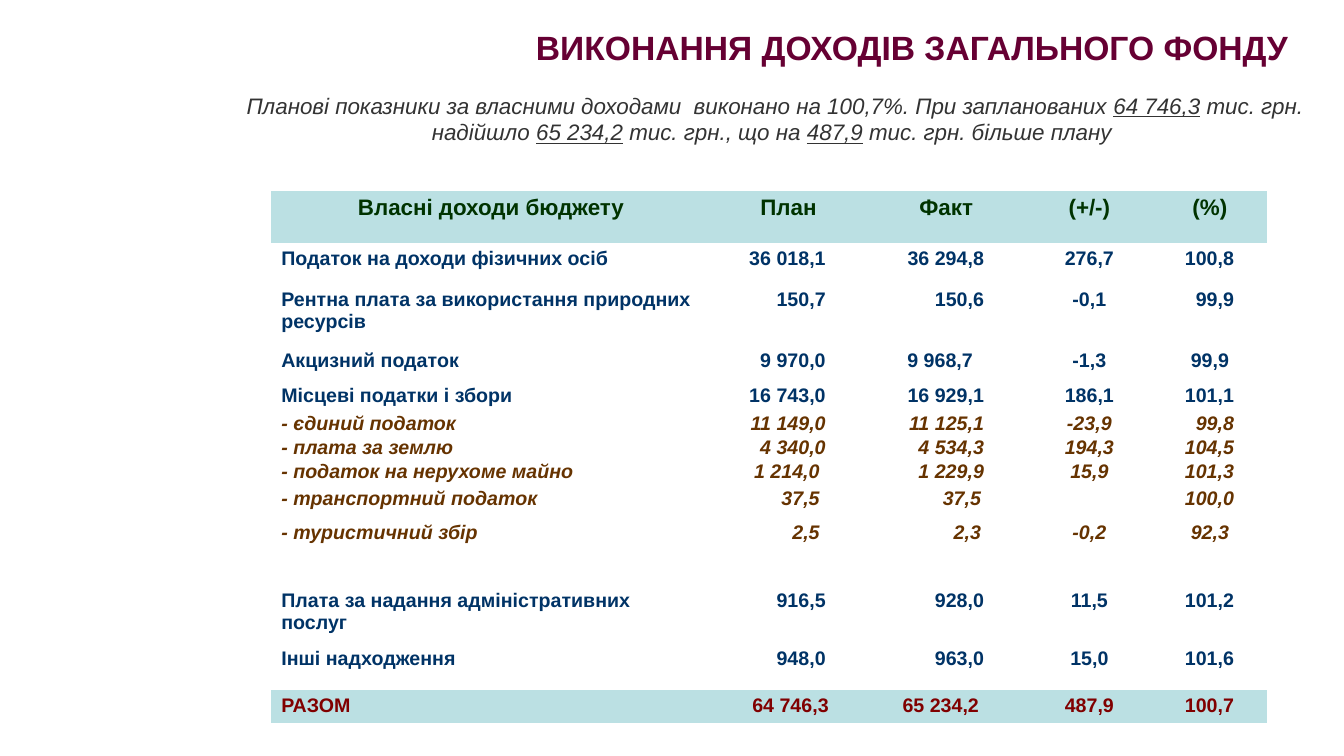
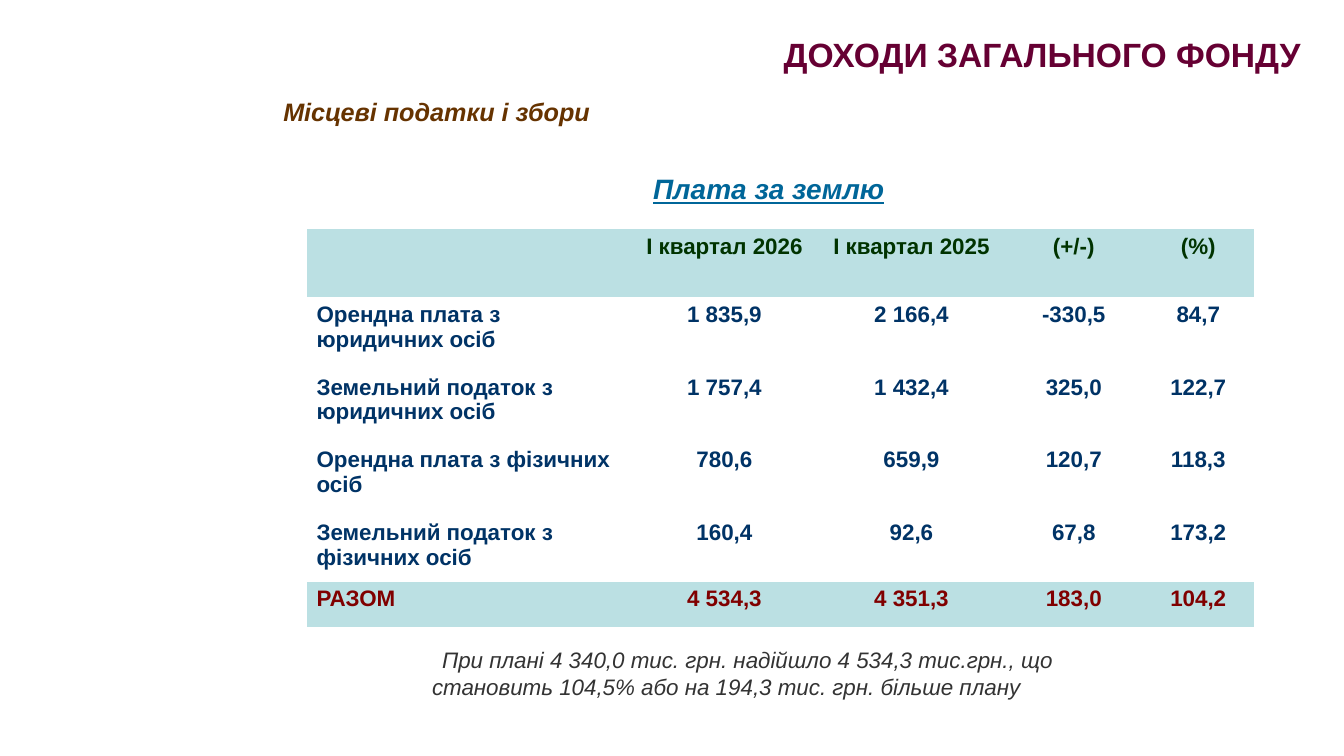
from lxml.etree import SubElement
from pptx import Presentation
from pptx.dml.color import RGBColor
from pptx.enum.text import MSO_ANCHOR as Anchor, PP_ALIGN as Align
from pptx.oxml.ns import qn
from pptx.util import Inches, Pt

PLUM = RGBColor(0x66, 0x00, 0x33)
RED = RGBColor(0xCC, 0x33, 0x00)
GRAY = RGBColor(0x33, 0x33, 0x33)
GREEN = RGBColor(0x00, 0x33, 0x00)
NAVY = RGBColor(0x00, 0x33, 0x66)
BROWN = RGBColor(0x66, 0x33, 0x00)
BLUE = RGBColor(0x00, 0x66, 0x99)
MAROON = RGBColor(0x80, 0x00, 0x00)
BAND = RGBColor(0xBB, 0xE0, 0xE3)

FONT = "Arial"
NO_GRID = "{2D5ABB26-0587-4C30-8999-92F81FD0307C}"

TITLE = {"size": Pt(24), "bold": True, "color": PLUM}
TITLE_END = {"size": Pt(40), "bold": True, "color": RED}
NOTE = {"size": Pt(16), "italic": True, "color": GRAY}
NOTE_SUM = {**NOTE, "underline": True}
SECTION = {"size": Pt(18), "bold": True, "italic": True, "color": BROWN}
TOPIC = {"size": Pt(20), "bold": True, "italic": True, "underline": True, "color": BLUE}
HEAD = {"size": Pt(16), "bold": True, "color": GREEN}
ITEM = {"size": Pt(14), "bold": True, "color": NAVY}
SUBITEM = {**ITEM, "italic": True, "color": BROWN}
TOTAL = {**ITEM, "color": MAROON}

INCOME_ROWS = [
    (0.52, HEAD, ["Власні доходи бюджету", "План", "Факт", "(+/-)", "(%)"]),
    (0.4, ITEM, ["Податок на доходи фізичних осіб", "36 018,1", "36 294,8", "276,7", "100,8"]),
    (0.61, ITEM, ["Рентна плата за використання природних ресурсів", "150,7", "150,6", "-0,1", "99,9"]),
    (0.35, ITEM, ["Акцизний податок", "9 970,0", "9 968,7", "-1,3", "99,9"]),
    (0.36, ITEM, ["Місцеві податки і збори", "16 743,0", "16 929,1", "186,1", "101,1"]),
    (0.24, SUBITEM, ["- єдиний податок", "11 149,0", "11 125,1", "-23,9", "99,8"]),
    (0.24, SUBITEM, ["- плата за землю", "4 340,0", "4 534,3", "194,3", "104,5"]),
    (0.27, SUBITEM, ["- податок на нерухоме майно", "1 214,0", "1 229,9", "15,9", "101,3"]),
    (0.33, SUBITEM, ["- транспортний податок", "37,5", "37,5", "", "100,0"]),
    (0.25, SUBITEM, ["- туристичний збір", "2,5", "2,3", "-0,2", "92,3"]),
    (0.34, ITEM, ["", "", "", "", ""]),
    (0.57, ITEM, ["Плата за надання адміністративних послуг", "916,5", "928,0", "11,5", "101,2"]),
    (0.47, ITEM, ["Інші надходження", "948,0", "963,0", "15,0", "101,6"]),
    (0.33, TOTAL, ["РАЗОМ", "64 746,3", "65 234,2", "487,9", "100,7"]),
]
INCOME_MARGINS = {1: 0.4, 2: 0.42, 4: 0.33}
INCOME_SHIFTS = {
    (3, 2): 0.53, (3, 4): 0.38, (7, 1): 0.46, (8, 1): 0.46, (8, 2): 0.45,
    (9, 1): 0.46, (9, 2): 0.45, (9, 4): 0.38, (13, 1): 0.37, (13, 2): 0.47,
}

LAND_ITEM = {**ITEM, "size": Pt(16)}
LAND_TOTAL = {**TOTAL, "size": Pt(16)}
LAND_ROWS = [
    (0.68, HEAD, ["", "І квартал 2026", "І квартал 2025", "(+/-)", "(%)"]),
    (0.72, LAND_ITEM, ["Орендна плата з юридичних осіб", "1 835,9", "2 166,4", "-330,5", "84,7"]),
    (0.72, LAND_ITEM, ["Земельний податок з юридичних осіб", "1 757,4", "1 432,4", "325,0", "122,7"]),
    (0.72, LAND_ITEM, ["Орендна плата з фізичних осіб", "780,6", "659,9", "120,7", "118,3"]),
    (0.66, LAND_ITEM, ["Земельний податок з фізичних осіб", "160,4", "92,6", "67,8", "173,2"]),
    (0.45, LAND_TOTAL, ["РАЗОМ", "4 534,3", "4 351,3", "183,0", "104,2"]),
]


def apply(target, formats):
    for name, value in formats.items():
        if name == "color":
            target.color.rgb = value
        else:
            setattr(target, name, value)


def add_span(para, text, style):
    span = para.add_run()
    span.text = text
    apply(span.font, {"name": FONT, **style})


def set_indents(para, **indents):
    props = para._p.get_or_add_pPr()
    for name, inches in indents.items():
        props.set(name, str(Inches(inches)))


def add_text(page, place, paragraphs, anchor=Anchor.TOP):
    box = page.shapes.add_textbox(*map(Inches, place))
    frame = box.text_frame
    apply(frame, {
        "word_wrap": True, "vertical_anchor": anchor,
        "margin_left": Inches(0.07), "margin_right": Inches(0.07),
        "margin_top": Inches(0.04), "margin_bottom": Inches(0.04),
    })
    for index, (spans, layout, indents) in enumerate(paragraphs):
        para = frame.add_paragraph() if index else frame.paragraphs[0]
        set_indents(para, **indents)
        apply(para, layout)
        for text, style in spans:
            add_span(para, text, style)


def add_title(page, place, spans):
    add_text(page, place, [(spans, {"alignment": Align.RIGHT}, {})], Anchor.MIDDLE)


def fill_cell(cell, text, style, align, banded):
    if banded:
        cell.fill.solid()
        cell.fill.fore_color.rgb = BAND
    else:
        cell.fill.background()
    para = cell.text_frame.paragraphs[0]
    para.alignment = align
    if text:
        if style is SUBITEM:
            para.line_spacing = 0.5
        add_span(para, text, style)
    else:
        SubElement(para._p, qn("a:endParaRPr")).set("sz", str(int(style["size"].pt * 100)))


def add_budget_table(page, left, top, widths, rows, margins={}, shifts={}):
    heights = [height for height, _, _ in rows]
    place = map(Inches, (left, top, sum(widths), sum(heights)))
    table = page.shapes.add_table(len(rows), len(widths), *place).table
    apply(table, {"first_row": False, "horz_banding": False})
    table._tbl.tblPr.find(qn("a:tableStyleId")).text = NO_GRID
    for column, width in zip(table.columns, widths):
        column.width = Inches(width)
    for r, (height, style, texts) in enumerate(rows):
        table.rows[r].height = Inches(height)
        header = r == 0
        banded = header or r == len(rows) - 1
        for c, text in enumerate(texts):
            cell = table.cell(r, c)
            align = Align.CENTER if c or header else Align.LEFT
            if c in margins and not header:
                align = Align.RIGHT
                cell.margin_right = Inches(shifts.get((r, c), margins[c]))
            fill_cell(cell, text, style, align, banded)


def add_income_page(deck):
    page = deck.slides.add_slide(deck.slide_layouts[6])
    add_title(page, (4.17, 0, 8.83, 0.75),
              [("ВИКОНАННЯ ДОХОДІВ ЗАГАЛЬНОГО ФОНДУ", TITLE), (" ", TITLE_END)])
    summary = [
        ("Планові показники за власними доходами  виконано на 100,7%. При запланованих ", NOTE),
        ("64 746,3", NOTE_SUM),
        (" тис. грн. надійшло ", NOTE),
        ("65 234,2", NOTE_SUM),
        (" тис. грн., що на ", NOTE),
        ("487,9", NOTE_SUM),
        (" тис. грн. більше плану ", NOTE),
    ]
    add_text(page, (2.24, 0.87, 10.89, 0.6), [(summary, {"alignment": Align.CENTER}, {})])
    add_budget_table(page, 2.69, 1.89, (4.36, 1.54, 1.59, 1.25, 1.14),
                     INCOME_ROWS, INCOME_MARGINS, INCOME_SHIFTS)


def add_land_page(deck):
    page = deck.slides.add_slide(deck.slide_layouts[6])
    add_title(page, (6.22, 0.2, 6.75, 0.67), [("ДОХОДИ ЗАГАЛЬНОГО ФОНДУ", TITLE)])
    add_text(page, (2.53, 0.92, 8.8, 1.12), [
        ([("Місцеві податки і збори", SECTION)], {}, {"marL": 0.21}),
        ([("Плата за землю", TOPIC)],
         {"alignment": Align.CENTER, "space_before": Pt(32)}, {"marL": 1.39}),
    ])
    add_budget_table(page, 3.04, 2.27, (3.22, 1.85, 1.86, 1.36, 1.11), LAND_ROWS)
    result = ("При плані 4 340,0 тис. грн. надійшло 4 534,3 тис.грн., що "
              "становить 104,5% або на 194,3 тис. грн. більше плану")
    add_text(page, (3.75, 6.37, 7.33, 0.6), [
        ([(result, NOTE)], {"alignment": Align.CENTER}, {"marR": 0.42, "indent": 0.42}),
    ])


def main():
    deck = Presentation()
    apply(deck, {"slide_width": Inches(13.33), "slide_height": Inches(7.5)})
    add_income_page(deck)
    add_land_page(deck)
    deck.save("out.pptx")


if __name__ == "__main__":
    main()
